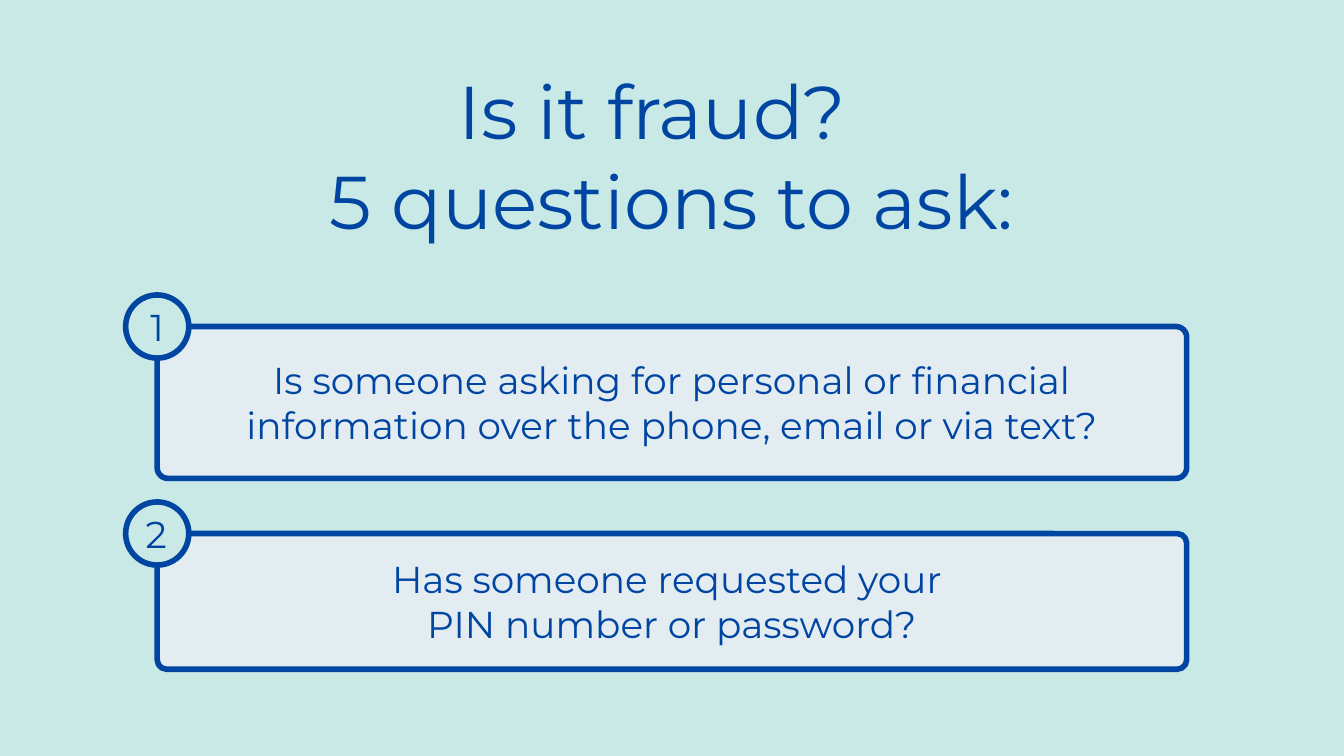
import pptx
import pptx.dml.color
import pptx.enum.shapes
import pptx.enum.text
import pptx.util

Inches = pptx.util.Inches
Pt = pptx.util.Pt
SHAPES = pptx.enum.shapes.MSO_SHAPE
ANCHORS = pptx.enum.text.MSO_ANCHOR

COLORS = {"background": "C9E9E6", "panel": "E2ECF1", "ink": "0045A2"}
FONT = "Montserrat"
BADGE_SIZE = 0.47
TITLE_LINES = ["Is it fraud?  ", "5 questions to ask:"]
QUESTIONS = [
    ("Is someone asking for personal or financial information "
     "over the phone, email or via text?", 2.43, 1.13, 0.1),
    ("Has someone requested your \nPIN number or password?", 3.97, 1.01, 0.08),
]


def rgb(name):
    """Return the named colour."""
    return pptx.dml.color.RGBColor.from_string(COLORS[name])


def write_text(shape, paragraphs, size=20, anchor=ANCHORS.MIDDLE, line_spacing=None,
               gap=None, margin_left=0.1):
    """Fill a shape with centred, formatted paragraphs."""
    frame = shape.text_frame
    frame.word_wrap = True
    frame.auto_size = pptx.enum.text.MSO_AUTO_SIZE.NONE
    frame.vertical_anchor = anchor
    frame.margin_left = Inches(margin_left)
    frame.margin_right = frame.margin_top = frame.margin_bottom = Inches(0.1)
    for index, text in enumerate(paragraphs):
        paragraph = frame.add_paragraph() if index else frame.paragraphs[0]
        paragraph.text = text
        paragraph.alignment = pptx.enum.text.PP_ALIGN.CENTER
        paragraph.line_spacing = line_spacing
        if gap is not None:
            paragraph.space_before = paragraph.space_after = Pt(gap if index else 0)
        for run in paragraph.runs:
            run.font.name = FONT
            run.font.size = Pt(size)
            run.font.color.rgb = rgb("ink")


def add_outlined_shape(slide, kind, left, top, width, height, fill):
    """Add a filled shape with the heavy blue outline."""
    shape = slide.shapes.add_shape(
        kind, Inches(left), Inches(top), Inches(width), Inches(height))
    shape.shadow.inherit = False
    shape.fill.solid()
    shape.fill.fore_color.rgb = rgb(fill)
    shape.line.color.rgb = rgb("ink")
    shape.line.width = Pt(3)
    return shape


def add_title(slide, left, top, width, height):
    """Place the heading in the title placeholder."""
    title = slide.shapes.title
    title.left, title.top = Inches(left), Inches(top)
    title.width, title.height = Inches(width), Inches(height)
    write_text(title, TITLE_LINES, size=40, anchor=ANCHORS.TOP, line_spacing=0.9, gap=5)


def add_question(slide, number, text, left, top, width, height, badge_margin):
    """Add a question panel with its number badge centred on the corner."""
    panel = add_outlined_shape(
        slide, SHAPES.ROUNDED_RECTANGLE, left, top, width, height, "panel")
    panel.adjustments[0] = 0.07
    write_text(panel, [text])
    badge = add_outlined_shape(
        slide, SHAPES.OVAL, left - BADGE_SIZE / 2, top - BADGE_SIZE / 2,
        BADGE_SIZE, BADGE_SIZE, "background")
    write_text(badge, [str(number)], margin_left=badge_margin)


def main():
    """Build and save the slide."""
    presentation = pptx.Presentation()
    presentation.slide_width = Inches(10)
    presentation.slide_height = Inches(10 * 9 / 16)
    slide = presentation.slides.add_slide(presentation.slide_layouts[5])
    slide.background.fill.solid()
    slide.background.fill.fore_color.rgb = rgb("background")
    add_title(slide, 1.55, 0.46, 6.9, 1.5)
    for number, (text, top, height, badge_margin) in enumerate(QUESTIONS, start=1):
        add_question(slide, number, text, 1.17, top, 7.66, height, badge_margin)
    presentation.save("out.pptx")


if __name__ == "__main__":
    main()
